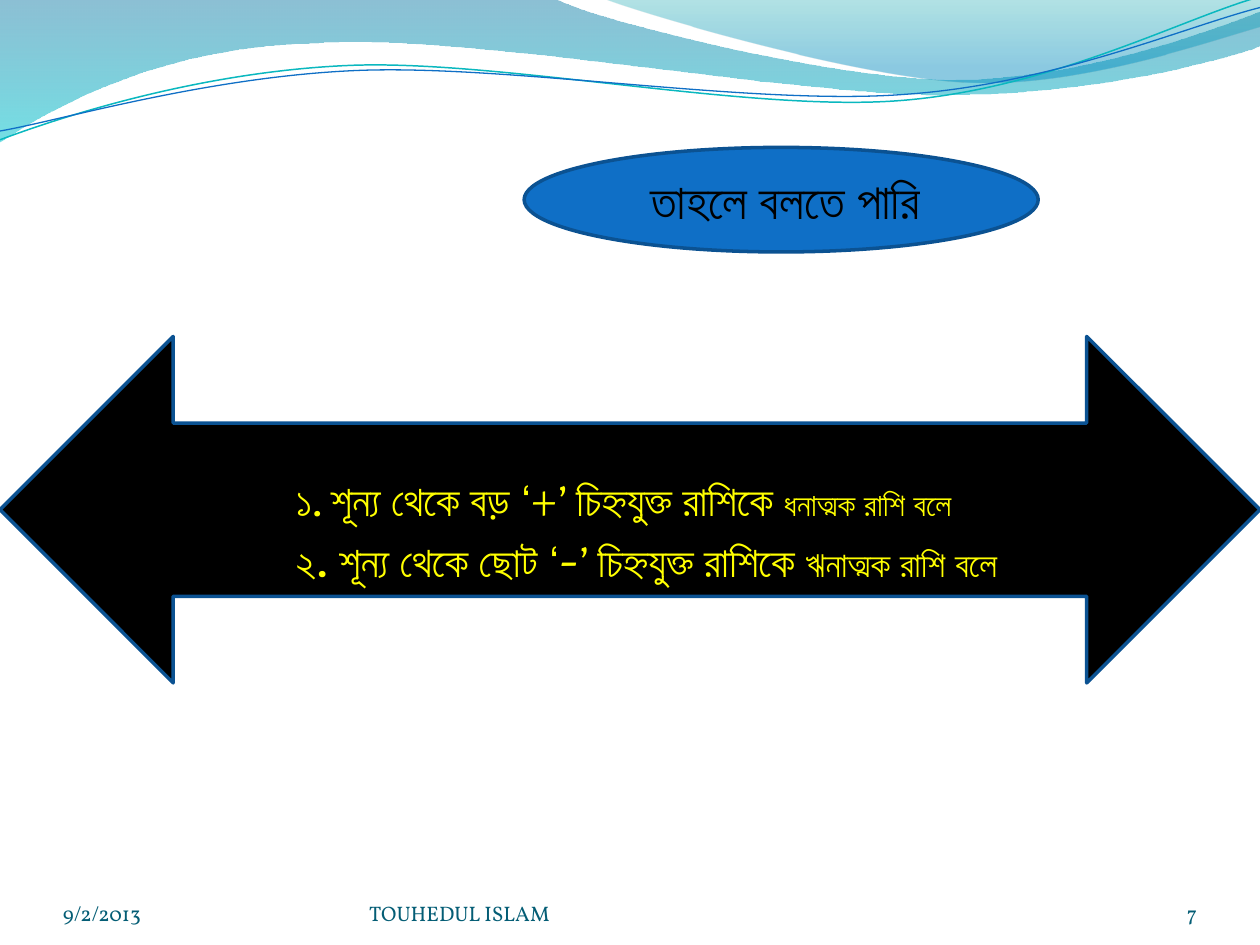
from lxml import etree
from pptx import Presentation
from pptx.dml.color import RGBColor as RGB
from pptx.enum.shapes import MSO_SHAPE as Kind
from pptx.enum.text import MSO_ANCHOR as Anchor, PP_ALIGN as Align
from pptx.oxml.ns import qn
from pptx.util import Inches, Pt

WIDE, HIGH = 10, 7.5
UNIT = 1000  # outline steps to the inch
INK = {
    "blue": "0F6FC6", "edge": "0B5292", "teal": "0AB8BF", "foot": "045D75",
    "black": "000000", "yellow": "FFFF00",
    "deep": "0074A1", "aqua": "00C6CF", "sea": "00A1A9", "sky": "008BBF",
}
SERIF, SANS = "Vollkorn", "Roboto"


def tint(name):
    return RGB.from_string(INK[name])


def trace(slide, parts, close):
    """Outline from a start, then lines (2 numbers) and Bezier arcs (6)."""
    grid = [[round(n * UNIT) for n in part] for part in parts]
    ends = [part[-2:] for part in grid]
    pen = slide.shapes.build_freeform(*ends[0], scale=Inches(1) / UNIT)
    pen.add_line_segments(ends[1:], close=close)
    shape = pen.convert_to_shape()
    shape.shadow.inherit = False
    # Bend the straight segments that have control points
    left, top = (min(axis) for axis in zip(*ends))
    segs = list(shape._element.iter(qn("a:lnTo")))
    for seg, part in zip(segs, grid[1:]):
        if len(part) == 6:
            arc = etree.Element(qn("a:cubicBezTo"))
            for x, y in zip(part[::2], part[1::2]):
                etree.SubElement(arc, qn("a:pt"), x=str(x - left),
                                 y=str(y - top))
            seg.getparent().replace(seg, arc)
    return shape


def wave(slide, parts, stops):
    """A closed band with a see-through gradient from top to bottom."""
    shape = trace(slide, parts, True)
    shape.line.fill.background()
    shape.fill.gradient()
    grad = shape.fill._fill._gradFill
    for kid in list(grad):
        grad.remove(kid)
    rows = etree.SubElement(grad, qn("a:gsLst"))
    for pos, name, alpha in stops:
        stop = etree.SubElement(rows, qn("a:gs"), pos=str(pos * 1000))
        hue = etree.SubElement(stop, qn("a:srgbClr"), val=INK[name])
        etree.SubElement(hue, qn("a:alpha"), val=str(alpha * 1000))
    etree.SubElement(grad, qn("a:lin"), ang="5400000", scaled="0")


def thread(slide, parts, name, width):
    shape = trace(slide, parts, False)
    shape.fill.background()
    shape.line.color.rgb = tint(name)
    shape.line.width = Pt(width)


def write(para, text, size, name, face=SERIF, bold=False):
    run = para.add_run()
    run.text = text
    font = run.font
    font.size, font.name, font.bold = Pt(size), face, bold
    font.color.rgb = tint(name)


def solid(slide, kind, box, fill):
    shape = slide.shapes.add_shape(kind, *map(Inches, box))
    shape.shadow.inherit = False
    shape.fill.solid()
    shape.fill.fore_color.rgb = tint(fill)
    shape.line.color.rgb = tint("edge")
    shape.line.width = Pt(2)
    shape.text_frame.word_wrap = True
    shape.text_frame.vertical_anchor = Anchor.MIDDLE
    return shape.text_frame


def header(slide):
    # Wide band, then the lighter one at the right
    wave(slide, [
        (0, 0), (4.4, -0.01), (4.76, 0.17, 6.64, 0.63, 7.58, 0.63),
        (8.53, 0.63, 9.58, 0.26, 10, 0.09), (10.01, 0.36),
        (9.83, 0.44, 8.7, 0.76, 7.46, 0.75),
        (6.22, 0.75, 3.82, 0.28, 2.57, 0.34),
        (1.29, 0.36, 0.46, 0.83, -0.01, 1.13)],
        [(0, "deep", 45), (100, "aqua", 55)])
    wave(slide, [
        (4.79, -0.01), (5.09, 0.11, 6.82, 0.62, 7.69, 0.65),
        (8.56, 0.69, 9.61, 0.32, 10, 0.21), (10, 0)],
        [(0, "sea", 30), (80, "sky", 45)])
    # Thin lines
    thread(slide, [
        (0, 1.11), (0.48, 0.93, 1.58, 0.57, 2.77, 0.52),
        (3.95, 0.47, 5.93, 0.89, 7.13, 0.8),
        (8.33, 0.71, 9.38, 0.15, 9.98, -0.02)], "teal", 0.85)
    thread(slide, [
        (0, 1.04), (0.47, 0.96, 1.64, 0.61, 2.83, 0.56),
        (4.03, 0.51, 5.97, 0.84, 7.17, 0.75),
        (8.36, 0.67, 9.41, 0.21, 10, 0.06)], "blue", 0.75)


def footer(slide, box):
    left, top, width, height = box
    cells = [("9/2/2013", 0, 0.26, Align.LEFT),
             ("TOUHEDUL ISLAM", 0.27, 0.41, Align.LEFT),
             ("7", 0.91, 0.09, Align.RIGHT)]
    for text, x, share, align in cells:
        area = left + x * width, top, share * width, height
        frame = slide.shapes.add_textbox(*map(Inches, area)).text_frame
        frame.word_wrap = True
        frame.vertical_anchor = Anchor.BOTTOM
        frame.margin_left = frame.margin_right = 0
        frame.margin_top = frame.margin_bottom = 0
        para = frame.paragraphs[0]
        para.alignment = align
        write(para, text, 12, "foot")


def rules(slide, box):
    frame = solid(slide, Kind.LEFT_RIGHT_ARROW, box, "black")
    frame.margin_top = Inches(0.31)
    lines = [
        [("১. শূন্য থেকে বড় ‘", 24), ("+", 28), ("’ চিহ্নযুক্ত রাশিকে ", 24),
         ("ধনাত্মক রাশি বলে", 18, SANS, True)],
        [("২. ", 24, SANS, True), ("শূন্য থেকে ছোট ‘", 24), ("-", 28),
         ("’ চিহ্নযুক্ত রাশিকে ", 24), ("ঋনাত্মক রাশি বলে", 20, SANS, True)],
    ]
    for i, line in enumerate(lines):
        para = frame.add_paragraph() if i else frame.paragraphs[0]
        para.alignment = Align.LEFT
        para.line_spacing = Pt(35)
        para._p.get_or_add_pPr().set("marL", str(Inches(1.56)))
        for text, size, *style in line:
            write(para, text, size, "yellow", *style)


def badge(slide, box):
    frame = solid(slide, Kind.OVAL, box, "blue")
    frame.margin_left = Inches(0.16)
    para = frame.paragraphs[0]
    para.alignment = Align.CENTER
    write(para, "তাহলে বলতে পারি", 28, "black", SANS)


def main():
    deck = Presentation()
    deck.slide_width, deck.slide_height = Inches(WIDE), Inches(HIGH)
    slide = deck.slides.add_slide(deck.slide_layouts[6])
    header(slide)
    footer(slide, (0.05 * WIDE, 6.95, 0.9 * WIDE, 0.4))
    rules(slide, (0, 2.67, WIDE, 2.75))
    badge(slide, (4.16, 1.17, 4.08, 0.83))
    deck.save("out.pptx")


if __name__ == "__main__":
    main()
